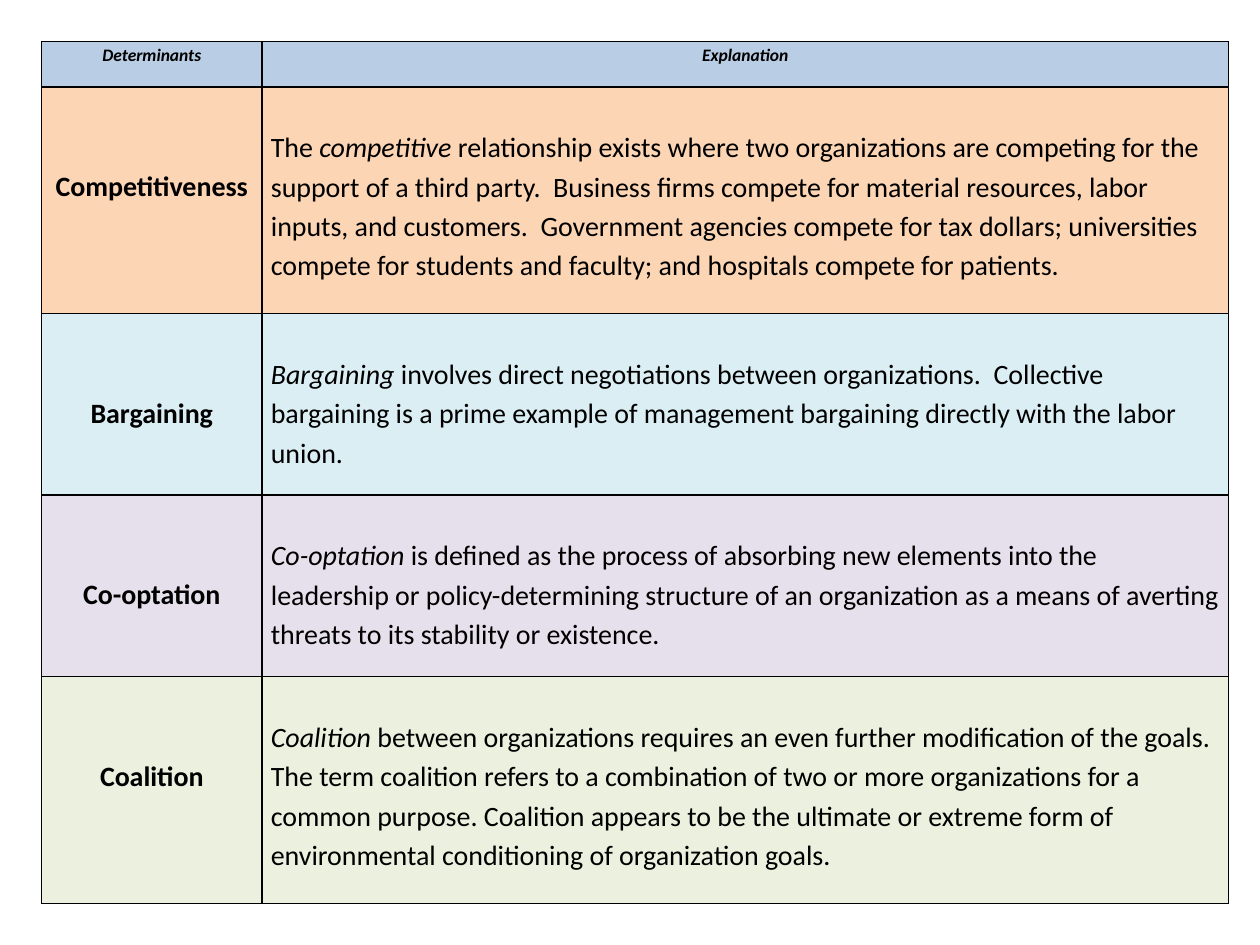
from lxml import etree
from pptx import Presentation
from pptx.dml.color import RGBColor
from pptx.enum.text import PP_ALIGN
from pptx.oxml.ns import qn
from pptx.util import Inches, Pt

CENTER = PP_ALIGN.CENTER
LEFT = PP_ALIGN.LEFT
BLACK = RGBColor(0x00, 0x00, 0x00)
BLUE = RGBColor(0xB9, 0xCD, 0xE5)
ORANGE = RGBColor(0xFC, 0xD5, 0xB5)
AQUA = RGBColor(0xDB, 0xEE, 0xF4)
PURPLE = RGBColor(0xE6, 0xE0, 0xEC)
GREEN = RGBColor(0xEB, 0xF1, 0xDE)

LINE_HEIGHT = 0.31
COLUMN_WIDTHS = (1.75, 7.67)
ROW_HEIGHTS = (0.36, 1.8, 1.44, 1.44, 1.8)
HEADINGS = ("Determinants", "Explanation")
DETERMINANTS = (
    ("Competitiveness", ORANGE, "The ", "competitive ",
     "relationship exists where two organizations are competing for the "
     "support of a third party.  Business firms compete for material "
     "resources, labor inputs, and customers.  Government agencies compete "
     "for tax dollars; universities compete for students and faculty; and "
     "hospitals compete for patients."),
    ("Bargaining", AQUA, "", "Bargaining ",
     "involves direct negotiations between organizations.  Collective "
     "bargaining is a prime example of management bargaining directly with "
     "the labor union."),
    ("Co-optation", PURPLE, "", "Co-optation",
     " is defined as the process of absorbing new elements into the "
     "leadership or policy-determining structure of an organization as a "
     "means of averting threats to its stability or existence."),
    ("Coalition", GREEN, "", "Coalition",
     " between organizations requires an even further modification of the "
     "goals.  The term coalition refers to a combination of two or more "
     "organizations for a common purpose. Coalition appears to be the "
     "ultimate or extreme form of environmental conditioning of "
     "organization goals."),
)


def add_borders(cell):
    properties = cell._tc.get_or_add_tcPr()
    for position, side in enumerate(("a:lnL", "a:lnR", "a:lnT", "a:lnB")):
        line = etree.Element(qn(side), w=str(Pt(1)))
        fill = etree.SubElement(line, qn("a:solidFill"))
        etree.SubElement(fill, qn("a:srgbClr"), val=str(BLACK))
        properties.insert(position, line)


def fill_cell(cell, runs, color, size, alignment, bold=False, top=0):
    cell.margin_left = cell.margin_right = Inches(0.07)
    cell.margin_top = Inches(top)
    cell.margin_bottom = 0
    cell.fill.solid()
    cell.fill.fore_color.rgb = color
    add_borders(cell)
    paragraph = cell.text_frame.paragraphs[0]
    paragraph.alignment = alignment
    paragraph.line_spacing = 1.15
    font = paragraph.font
    font.name = "Calibri"
    font.size = Pt(size)
    font.bold = bold
    font.color.rgb = BLACK
    for text, italic in runs:
        if text:
            run = paragraph.add_run()
            run.text = text
            run.font.italic = italic


def add_determinants_table(slide):
    frame = slide.shapes.add_table(
        len(ROW_HEIGHTS), len(COLUMN_WIDTHS), Inches(0.33), Inches(0.33),
        Inches(sum(COLUMN_WIDTHS)), Inches(sum(ROW_HEIGHTS)))
    table = frame.table
    for column, width in zip(table.columns, COLUMN_WIDTHS):
        column.width = Inches(width)
    for row, height in zip(table.rows, ROW_HEIGHTS):
        row.height = Inches(height)
    for column, heading in enumerate(HEADINGS):
        fill_cell(table.cell(0, column), [(heading, True)], BLUE, 10, CENTER,
                  bold=True)
    for row, (name, color, lead, term, rest) in enumerate(DETERMINANTS, 1):
        fill_cell(table.cell(row, 0), [(name, False)], color, 16, CENTER,
                  bold=True, top=2 * LINE_HEIGHT)
        explanation = [(lead, False), (term, True), (rest, False)]
        fill_cell(table.cell(row, 1), explanation, color, 16, LEFT,
                  top=LINE_HEIGHT)


def main():
    presentation = Presentation()
    presentation.slide_width = Inches(10)
    presentation.slide_height = Inches(7.5)
    slide = presentation.slides.add_slide(presentation.slide_layouts[6])
    add_determinants_table(slide)
    presentation.save("out.pptx")


if __name__ == "__main__":
    main()
